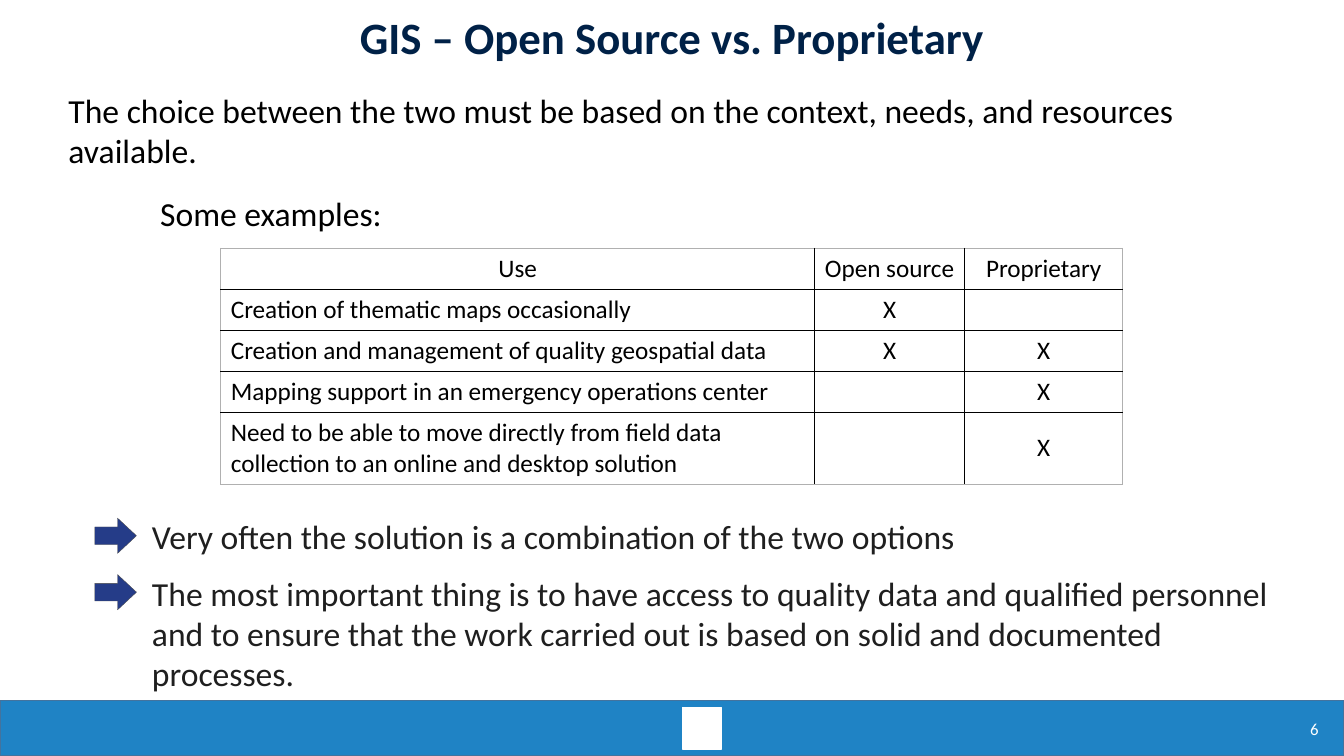
from dataclasses import dataclass
from typing import Any, Optional

import lxml.etree
import pptx
import pptx.dml.color
import pptx.enum.shapes
import pptx.enum.text
import pptx.oxml.ns
import pptx.util

Pt = pptx.util.Pt
Align = pptx.enum.text.PP_ALIGN
Anchor = pptx.enum.text.MSO_ANCHOR
Preset = pptx.enum.shapes.MSO_SHAPE

SLIDE_WIDTH = 960
SLIDE_HEIGHT = 540
BLACK = "000000"
WHITE = "FFFFFF"
BODY_GREY = "1F1F1F"
EDGE_GREY = "B0B0B0"


@dataclass(frozen=True)
class Block:
    kind: Any
    left: float
    top: float
    width: float
    height: float
    fill: str
    line: str
    line_width: float = 1
    adjustments: tuple[float, ...] = ()


@dataclass(frozen=True)
class Label:
    text: str
    left: float
    top: float
    width: float
    height: float
    size: float = 24
    color: str = BLACK
    bold: bool = False
    align: Any = Align.LEFT
    anchor: Any = Anchor.TOP
    grows: bool = True
    line_spacing: Optional[float] = None


@dataclass(frozen=True)
class UseCase:
    use: str
    open_source: str
    proprietary: str
    height: float = 29.3


def arrow(top: float) -> Block:
    return Block(Preset.RIGHT_ARROW, 67.7, top, 29.8, 25.2, "253C88", "4D4D4D", 0.25, (0.5, 0.536))


BLOCKS = [
    Block(Preset.RECTANGLE, 0, 500.4, SLIDE_WIDTH, 39.6, "1F83C5", "43739E"),
    Block(Preset.RECTANGLE, 487.4, 505.4, 28.1, 29.5, WHITE, WHITE),
    arrow(370.1),
    arrow(410.4),
]

LABELS = [
    Label("GIS – Open Source vs. Proprietary", 0, 1.4, SLIDE_WIDTH, 54.7, 32, "002147", True,
          Align.CENTER, Anchor.MIDDLE, False, 0.9),
    Label("The choice between the two must be based on the context, needs, and resources available.",
          41.8, 60.5, 877.7, 65.5),
    Label("Some examples:", 107.3, 134.6, 226.8, 36),
    Label("Very often the solution is a combination of the two options",
          101.5, 365, 648, 36, color=BODY_GREY),
    Label("The most important thing is to have access to quality data and qualified personnel "
          "and to ensure that the work carried out is based on solid and documented processes.",
          101.5, 405.4, 817.9, 94.3, color=BODY_GREY),
    Label("6", 928.8, 509.8, 31, 22.3, 12, WHITE, grows=False),
]

COLUMN_WIDTHS = (424.1, 107.3, 113)
USE_CASES = [
    UseCase("Use", "Open source", "Proprietary"),
    UseCase("Creation of thematic maps occasionally", "X", ""),
    UseCase("Creation and management of quality geospatial data", "X", "X"),
    UseCase("Mapping support in an emergency operations center", "", "X"),
    UseCase("Need to be able to move directly from field data collection to an online and desktop solution",
            "", "X", 50),
]


def rgb(value: str) -> pptx.dml.color.RGBColor:
    return pptx.dml.color.RGBColor.from_string(value)


def add_span(para: Any, text: str, size: float, color: str, bold: bool = False) -> None:
    span = para.add_run()
    span.text = text
    span.font.name = "Calibri"
    span.font.size = Pt(size)
    span.font.bold = bold
    span.font.color.rgb = rgb(color)


def draw_block(page: Any, block: Block) -> None:
    shape = page.shapes.add_shape(
        block.kind, Pt(block.left), Pt(block.top), Pt(block.width), Pt(block.height))
    shape.shadow.inherit = False
    shape.fill.solid()
    shape.fill.fore_color.rgb = rgb(block.fill)
    shape.line.color.rgb = rgb(block.line)
    shape.line.width = Pt(block.line_width)
    for index, value in enumerate(block.adjustments):
        shape.adjustments[index] = value


def draw_label(page: Any, label: Label) -> None:
    box = page.shapes.add_textbox(
        Pt(label.left), Pt(label.top), Pt(label.width), Pt(label.height))
    frame = box.text_frame
    frame.word_wrap = True
    frame.vertical_anchor = label.anchor
    if label.grows:
        frame.auto_size = pptx.enum.text.MSO_AUTO_SIZE.SHAPE_TO_FIT_TEXT
    para = frame.paragraphs[0]
    para.alignment = label.align
    if label.line_spacing:
        para.line_spacing = label.line_spacing
    add_span(para, label.text, label.size, label.color, label.bold)


def set_borders(cell: Any, colors: dict[str, str]) -> None:
    qn = pptx.oxml.ns.qn
    properties = cell._tc.get_or_add_tcPr()
    for index, (side, color) in enumerate(colors.items()):
        border = lxml.etree.Element(qn(f"a:{side}"), w=str(Pt(1)))
        fill = lxml.etree.SubElement(border, qn("a:solidFill"))
        lxml.etree.SubElement(fill, qn("a:srgbClr"), val=color)
        properties.insert(index, border)


def draw_table(page: Any) -> None:
    row_count, column_count = len(USE_CASES), len(COLUMN_WIDTHS)
    frame = page.shapes.add_table(
        row_count, column_count, Pt(157.7), Pt(177.5),
        Pt(sum(COLUMN_WIDTHS)), Pt(sum(case.height for case in USE_CASES)))
    table = frame.table
    table.first_row = False
    table.horz_banding = False
    for column, width in zip(table.columns, COLUMN_WIDTHS):
        column.width = Pt(width)
    for row, case in enumerate(USE_CASES):
        table.rows[row].height = Pt(case.height)
        for column, text in enumerate((case.use, case.open_source, case.proprietary)):
            cell = table.cell(row, column)
            cell.fill.background()
            set_borders(cell, {
                "lnL": EDGE_GREY if column == 0 else BLACK,
                "lnR": EDGE_GREY if column == column_count - 1 else BLACK,
                "lnT": EDGE_GREY if row == 0 else BLACK,
                "lnB": EDGE_GREY if row == row_count - 1 else BLACK,
            })
            if not text:
                continue
            para = cell.text_frame.paragraphs[0]
            if row == 0 or column > 0:
                cell.vertical_anchor = Anchor.MIDDLE
                para.alignment = Align.CENTER
            add_span(para, text, 18, BLACK)


def main() -> None:
    deck = pptx.Presentation()
    deck.slide_width = Pt(SLIDE_WIDTH)
    deck.slide_height = Pt(SLIDE_HEIGHT)
    page = deck.slides.add_slide(deck.slide_layouts[6])
    for block in BLOCKS:
        draw_block(page, block)
    draw_table(page)
    for label in LABELS:
        draw_label(page, label)
    deck.save("out.pptx")


if __name__ == "__main__":
    main()
